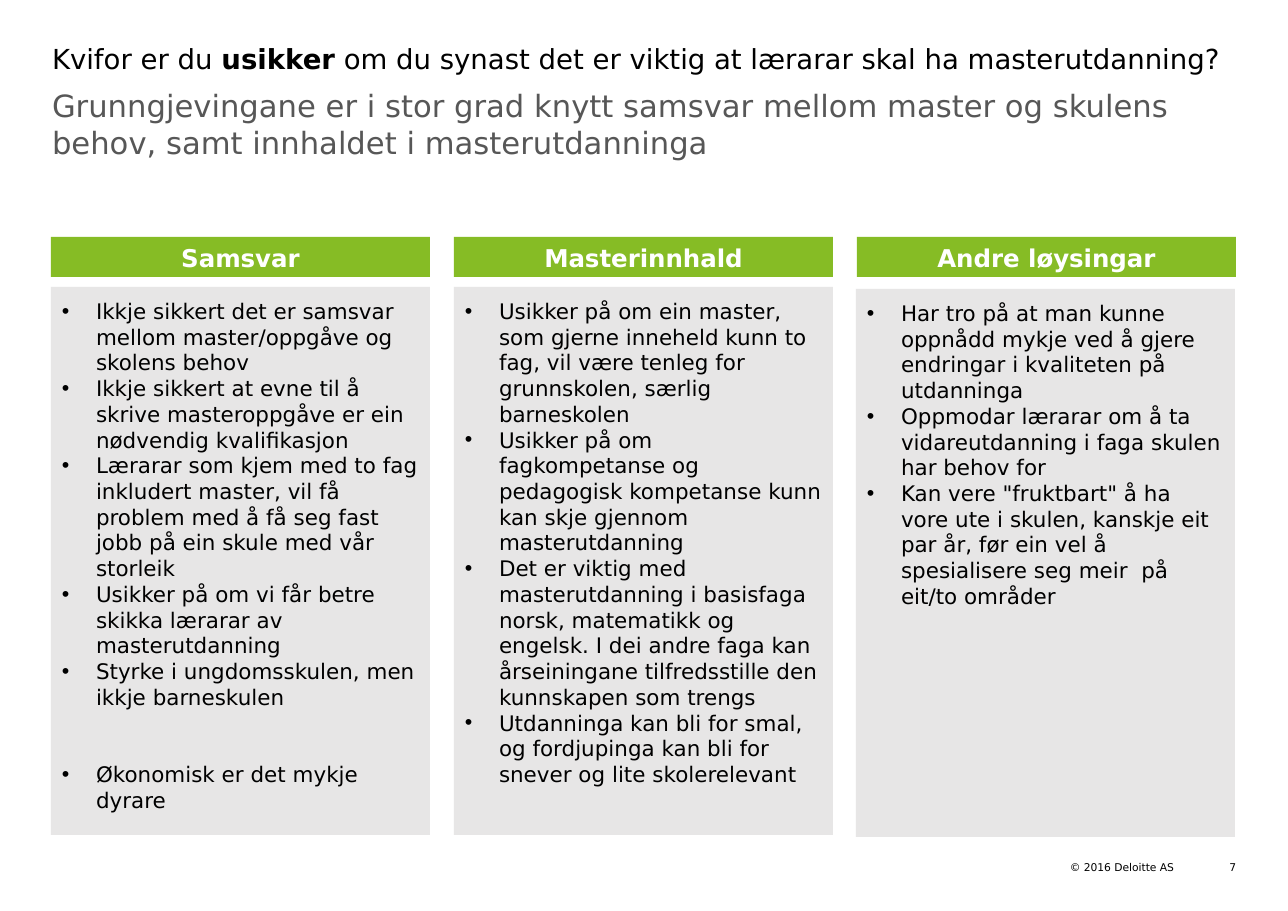
"""Build the slide on reasons for being unsure about master's degrees for teachers."""
from lxml.etree import SubElement
from pptx import Presentation
from pptx.dml.color import RGBColor
from pptx.enum.shapes import MSO_SHAPE
from pptx.enum.text import MSO_ANCHOR as ANCHOR, MSO_AUTO_SIZE as AUTO, PP_ALIGN as ALIGN
from pptx.oxml.ns import qn
from pptx.util import Pt

PX = 8298
FONT = "DejaVu Sans"
BLACK = RGBColor(0x00, 0x00, 0x00)
WHITE = RGBColor(0xFF, 0xFF, 0xFF)
GREY = RGBColor(0x57, 0x57, 0x57)
PALE = RGBColor(0xE7, 0xE6, 0xE6)
GREEN = RGBColor(0x86, 0xBC, 0x25)

LEFT, PITCH, COL_W = 51, 403, 379
HEAD_TOP, HEAD_H, BODY_H = 237, 40, 548
INSET, INDENT = 11, 34

COLUMNS = [
    ("Samsvar", LEFT, 287, [
        "Ikkje sikkert det er samsvar mellom master/oppgåve og skolens behov",
        "Ikkje sikkert at evne til å skrive masteroppgåve er ein nødvendig kvalifikasjon",
        "Lærarar som kjem med to fag inkludert master, vil få problem med å få seg fast "
        "jobb på ein skule med vår storleik",
        "Usikker på om vi får betre skikka lærarar av masterutdanning",
        "Styrke i ungdomsskulen, men ikkje barneskulen",
        "Økonomisk er det mykje dyrare",
    ]),
    ("Masterinnhald", LEFT + PITCH, 287, [
        "Usikker på om ein master, som gjerne inneheld kunn to fag, vil være tenleg for "
        "grunnskolen, særlig barneskolen",
        "Usikker på om fagkompetanse og pedagogisk kompetanse kunn kan skje gjennom "
        "masterutdanning",
        "Det er viktig med masterutdanning i basisfaga norsk, matematikk og engelsk. I dei "
        "andre faga kan årseiningane tilfredsstille den kunnskapen som trengs",
        "Utdanninga kan bli for smal, og fordjupinga kan bli for snever og lite skolerelevant",
    ]),
    ("Andre løysingar", LEFT + 2 * PITCH - 1, 289, [
        "Har tro på at man kunne oppnådd mykje ved å gjere endringar i kvaliteten på utdanninga",
        "Oppmodar lærarar om å ta vidareutdanning i faga skulen har behov for",
        "Kan vere \"fruktbart\" å ha vore ute i skulen, kanskje eit par år, før ein vel å "
        "spesialisere seg meir  på eit/to områder",
    ]),
]


def set_frame(sp, inset, anchor=ANCHOR.TOP, wrap=True):
    tf = sp.text_frame
    tf.auto_size = AUTO.NONE
    tf.word_wrap = wrap
    tf.vertical_anchor = anchor
    tf.margin_left = tf.margin_right = tf.margin_top = tf.margin_bottom = inset * PX
    return tf


def add_run(p, text, size, color, bold=False, align=ALIGN.LEFT):
    p.alignment = align
    r = p.add_run()
    r.text = text
    r.font.name = FONT
    r.font.size = Pt(size)
    r.font.bold = bold
    r.font.color.rgb = color


prs = Presentation()
prs.slide_width, prs.slide_height = 1288 * PX, 911 * PX
s = prs.slides.add_slide(prs.slide_layouts[5])

title = s.shapes.title
title.left, title.top, title.width, title.height = 52 * PX, 42 * PX, 1184 * PX, 44 * PX
p = set_frame(title, 0).paragraphs[0]
add_run(p, "Kvifor er du ", 18, BLACK)
add_run(p, "usikker", 18, BLACK, bold=True)
add_run(p, " om du synast det er viktig at lærarar skal ha masterutdanning?", 18, BLACK)

TEXTS = [
    (52, 87, 1184, 100, "Grunngjevingane er i stor grad knytt samsvar mellom master og skulens "
     "behov, samt innhaldet i masterutdanninga", 20, GREY, ALIGN.LEFT, True),
    (1067, 861, 107, 13, "© 2016 Deloitte AS", 7, BLACK, ALIGN.RIGHT, False),
    (1203, 861, 33, 13, "7", 7, BLACK, ALIGN.RIGHT, True),
]
for x, y, w, h, text, size, color, align, wrap in TEXTS:
    sp = s.shapes.add_textbox(x * PX, y * PX, w * PX, h * PX)
    add_run(set_frame(sp, 0, wrap=wrap).paragraphs[0], text, size, color, align=align)

for i, (heading, body_left, body_top, bullets) in enumerate(COLUMNS):
    boxes = []
    for x, y, h, fill, anchor in (
        (body_left, body_top, BODY_H, PALE, ANCHOR.TOP),
        (LEFT + i * PITCH, HEAD_TOP, HEAD_H, GREEN, ANCHOR.MIDDLE),
    ):
        sp = s.shapes.add_shape(MSO_SHAPE.RECTANGLE, x * PX, y * PX, COL_W * PX, h * PX)
        sp.shadow.inherit = False
        sp.fill.solid()
        sp.fill.fore_color.rgb = fill
        sp.line.fill.background()
        boxes.append(set_frame(sp, INSET, anchor))
    body, head = boxes

    p = head.paragraphs[0]
    p.line_spacing = 1.06
    add_run(p, heading, 16, WHITE, bold=True, align=ALIGN.CENTER)

    for n, text in enumerate(bullets):
        p = body.add_paragraph() if n else body.paragraphs[0]
        pPr = p._p.get_or_add_pPr()
        pPr.set("marL", str(INDENT * PX))
        pPr.set("indent", str(-INDENT * PX))
        SubElement(pPr, qn("a:buFont")).set("typeface", "Arial")
        SubElement(pPr, qn("a:buChar")).set("char", "•")
        add_run(p, text, 14, BLACK)
        if text.startswith("Økonomisk"):
            p.space_before = Pt(33.5)

prs.save("out.pptx")
